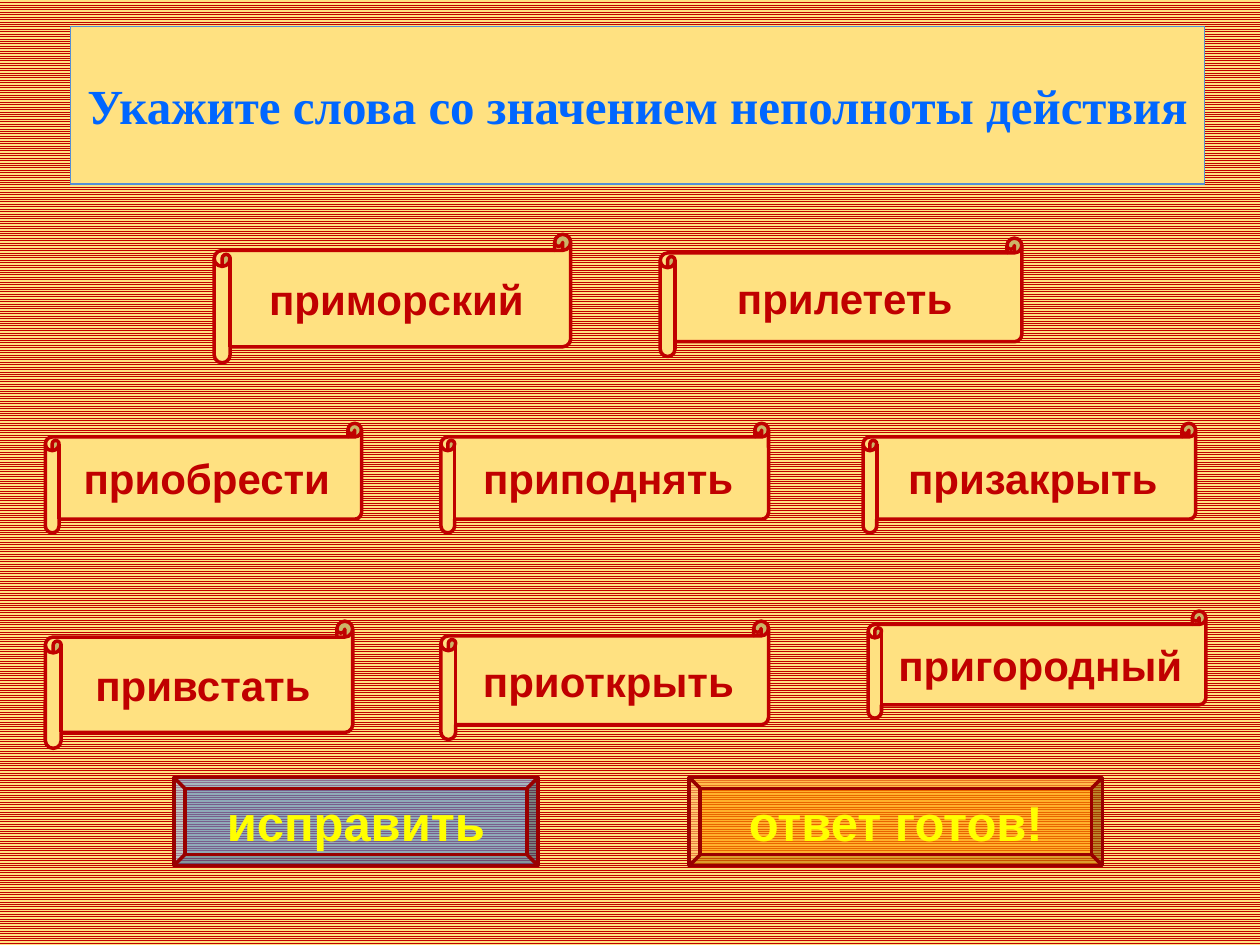
import pptx
import pptx.dml.color
import pptx.enum.dml
import pptx.enum.shapes
import pptx.enum.text
import pptx.oxml.ns
import pptx.util
from lxml import etree

Inches = pptx.util.Inches
RGBColor = pptx.dml.color.RGBColor
SHAPES = pptx.enum.shapes.MSO_SHAPE

RED = RGBColor(0xC0, 0x00, 0x00)
DARK_RED = RGBColor(0x99, 0x00, 0x00)
CREAM = RGBColor(0xFF, 0xE1, 0x81)
BLUE = RGBColor(0x55, 0x8E, 0xD5)
BRIGHT_BLUE = RGBColor(0x00, 0x66, 0xFF)
ORANGE = RGBColor(0xFF, 0x99, 0x00)
YELLOW = RGBColor(0xFF, 0xFF, 0x00)

WORDS = [
    ("приобрести", 0.36, 3.36, 2.51, 0.87),
    ("привстать", 0.36, 4.93, 2.44, 1.01),
    ("приподнять", 3.5, 3.36, 2.6, 0.87),
    ("приоткрыть", 3.5, 4.93, 2.6, 0.94),
    ("призакрыть", 6.85, 3.36, 2.64, 0.87),
    ("пригородный", 6.89, 4.85, 2.68, 0.85),
    ("прилететь", 5.24, 1.89, 2.87, 0.94),
    ("приморский", 1.7, 1.86, 2.83, 1.02),
]
BUTTONS = [
    ("исправить", 1.38, 2.89, BLUE),
    ("ответ готов!", 5.47, 3.28, ORANGE),
]


def add_panel(slide, kind, box, fill_color, line_color, line_width):
    shape = slide.shapes.add_shape(kind, *[Inches(length) for length in box])
    shape.shadow.inherit = False
    shape.fill.solid()
    shape.fill.fore_color.rgb = fill_color
    shape.line.color.rgb = line_color
    shape.line.width = pptx.util.Pt(line_width)
    return shape


def add_label(shape, text, size, color, font_name="Arial"):
    frame = shape.text_frame
    frame.word_wrap = False
    frame.vertical_anchor = pptx.enum.text.MSO_ANCHOR.MIDDLE
    paragraph = frame.paragraphs[0]
    paragraph.alignment = pptx.enum.text.PP_ALIGN.CENTER
    run = paragraph.add_run()
    run.text = text
    run.font.name = font_name
    run.font.size = pptx.util.Pt(size)
    run.font.bold = True
    run.font.color.rgb = color
    return run


def set_opacity(shape, percent):
    color = shape.fill._xPr.find(".//" + pptx.oxml.ns.qn("a:srgbClr"))
    alpha = etree.SubElement(color, pptx.oxml.ns.qn("a:alpha"))
    alpha.set("val", str(percent * 1000))


def outline_text(run, color, width):
    outline = etree.Element(pptx.oxml.ns.qn("a:ln"))
    outline.set("w", str(pptx.util.Pt(width)))
    fill = etree.SubElement(outline, pptx.oxml.ns.qn("a:solidFill"))
    etree.SubElement(fill, pptx.oxml.ns.qn("a:srgbClr")).set("val", str(color))
    run.font._element.insert(0, outline)


def set_background(slide):
    fill = slide.background.fill
    fill.patterned()
    fill.pattern = pptx.enum.dml.MSO_PATTERN.LIGHT_HORIZONTAL
    fill.fore_color.rgb = RED
    fill.back_color.rgb = CREAM


def add_word_scroll(slide, word, box):
    scroll = add_panel(slide, SHAPES.HORIZONTAL_SCROLL, box, CREAM, RED, 2)
    add_label(scroll, word, 24, RED)


def add_button(slide, caption, left, width, color):
    box = (left, 6.17, width, 0.7)
    button = add_panel(slide, SHAPES.BEVEL, box, color, DARK_RED, 2)
    set_opacity(button, 66)
    run = add_label(button, caption, 28, YELLOW)
    outline_text(run, RED, 1.42)


def add_title(slide, text):
    title = add_panel(slide, SHAPES.RECTANGLE, (0.56, 0.21, 9, 1.25), CREAM, BLUE, 0.75)
    add_label(title, text, 28, BRIGHT_BLUE, "Times New Roman")


def main():
    presentation = pptx.Presentation()
    presentation.slide_width = Inches(10)
    presentation.slide_height = Inches(7.5)
    slide = presentation.slides.add_slide(presentation.slide_layouts[6])
    set_background(slide)
    for word, *box in WORDS:
        add_word_scroll(slide, word, box)
    for button in BUTTONS:
        add_button(slide, *button)
    add_title(slide, "Укажите слова со значением неполноты действия")
    presentation.save("out.pptx")


if __name__ == "__main__":
    main()
